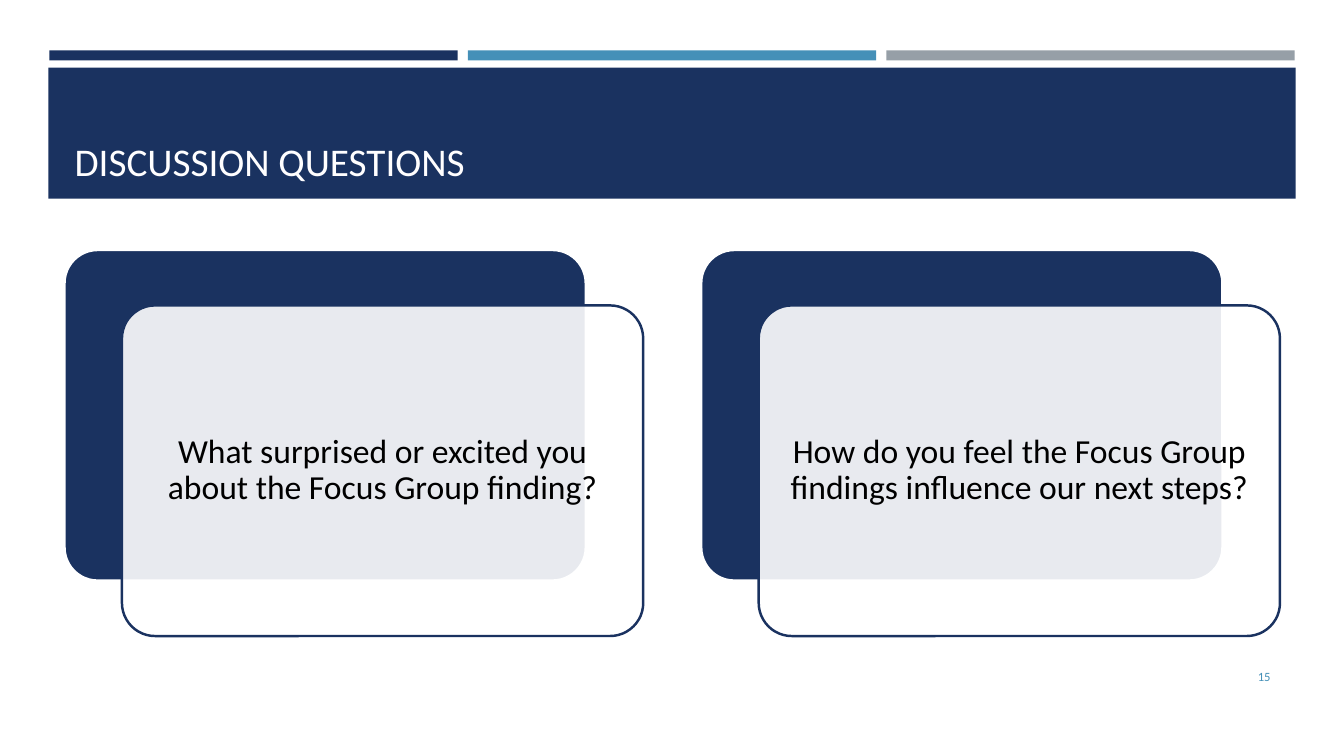
from lxml import etree
from pptx import Presentation
from pptx.dml.color import RGBColor
from pptx.enum.shapes import MSO_SHAPE
from pptx.enum.text import MSO_ANCHOR, PP_ALIGN
from pptx.oxml.ns import qn
from pptx.util import Inches, Pt

RECTANGLE, ROUNDED = MSO_SHAPE.RECTANGLE, MSO_SHAPE.ROUNDED_RECTANGLE
LEFT, CENTER, RIGHT = PP_ALIGN.LEFT, PP_ALIGN.CENTER, PP_ALIGN.RIGHT
MIDDLE, BOTTOM = MSO_ANCHOR.MIDDLE, MSO_ANCHOR.BOTTOM

NAVY = RGBColor(0x1A, 0x32, 0x60)
BLUE = RGBColor(0x45, 0x90, 0xB8)
GRAY = RGBColor(0x96, 0x9F, 0xA7)
WHITE = RGBColor(0xFF, 0xFF, 0xFF)
TITLE_WHITE = RGBColor(0xFF, 0xFE, 0xFF)
BLACK = RGBColor(0x00, 0x00, 0x00)


def add_box(kind, left, top, width, height, fill, line=None):
    shape = slide.shapes.add_shape(
        kind, Inches(left), Inches(top), Inches(width), Inches(height))
    shape.shadow.inherit = False
    shape.fill.solid()
    shape.fill.fore_color.rgb = fill
    if line is None:
        shape.line.fill.background()
    else:
        shape.line.color.rgb = line
        shape.line.width = Pt(1.75)
    if kind == ROUNDED:
        shape.adjustments[0] = 0.1
    return shape


def write_text(shape, text, size, color, align=LEFT, anchor=MIDDLE,
               margin=0.05, spacing=1.0):
    frame = shape.text_frame
    frame.word_wrap = True
    frame.vertical_anchor = anchor
    frame.margin_left = frame.margin_right = Inches(0.1)
    frame.margin_top = frame.margin_bottom = Inches(margin)
    paragraph = frame.paragraphs[0]
    paragraph.alignment = align
    paragraph.line_spacing = spacing
    run = paragraph.add_run()
    run.text = text
    run.font.name = "Calibri"
    run.font.size = Pt(size)
    run.font.color.rgb = color


presentation = Presentation()
presentation.slide_width = Inches(13.33)
presentation.slide_height = Inches(7.5)
slide = presentation.slides.add_slide(presentation.slide_layouts[5])

# Header: three accent bars above a title band, all behind the title
title = slide.shapes.title
for column, color in enumerate((NAVY, BLUE, GRAY)):
    bar = add_box(RECTANGLE, 0.49 + column * 4.15, 0.5, 4.05, 0.1, color)
    title.element.addprevious(bar.element)
band = add_box(RECTANGLE, 0.48, 0.67, 12.37, 1.3, NAVY)
title.element.addprevious(band.element)

title.left, title.top = Inches(0.64), Inches(0.77)
title.width, title.height = Inches(12.06), Inches(1.11)
write_text(title, "DISCUSSION QUESTIONS", 28, TITLE_WHITE, anchor=BOTTOM)

# Question cards: a translucent card offset over a navy one
questions = (
    "What surprised or excited you about the Focus Group finding?\u00a0".strip(),
    "How do you feel the Focus Group findings influence our next steps?",
)
for column, question in enumerate(questions):
    left = 0.64 + column * 6.315
    add_box(ROUNDED, left, 2.48, 5.17, 3.28, NAVY, line=WHITE)
    card = add_box(ROUNDED, left + 0.57, 3.03, 5.17, 3.28, WHITE, line=NAVY)
    card_color = card.element.spPr.find(qn("a:solidFill"))[0]
    etree.SubElement(card_color, qn("a:alpha"), val="90000")
    write_text(card, question, 24, BLACK, align=CENTER, margin=0.1, spacing=0.9)

page_number = slide.shapes.add_textbox(
    Inches(11.55), Inches(6.51), Inches(1.15), Inches(0.4))
write_text(page_number, "15", 9, BLUE, align=RIGHT)

presentation.save("out.pptx")
